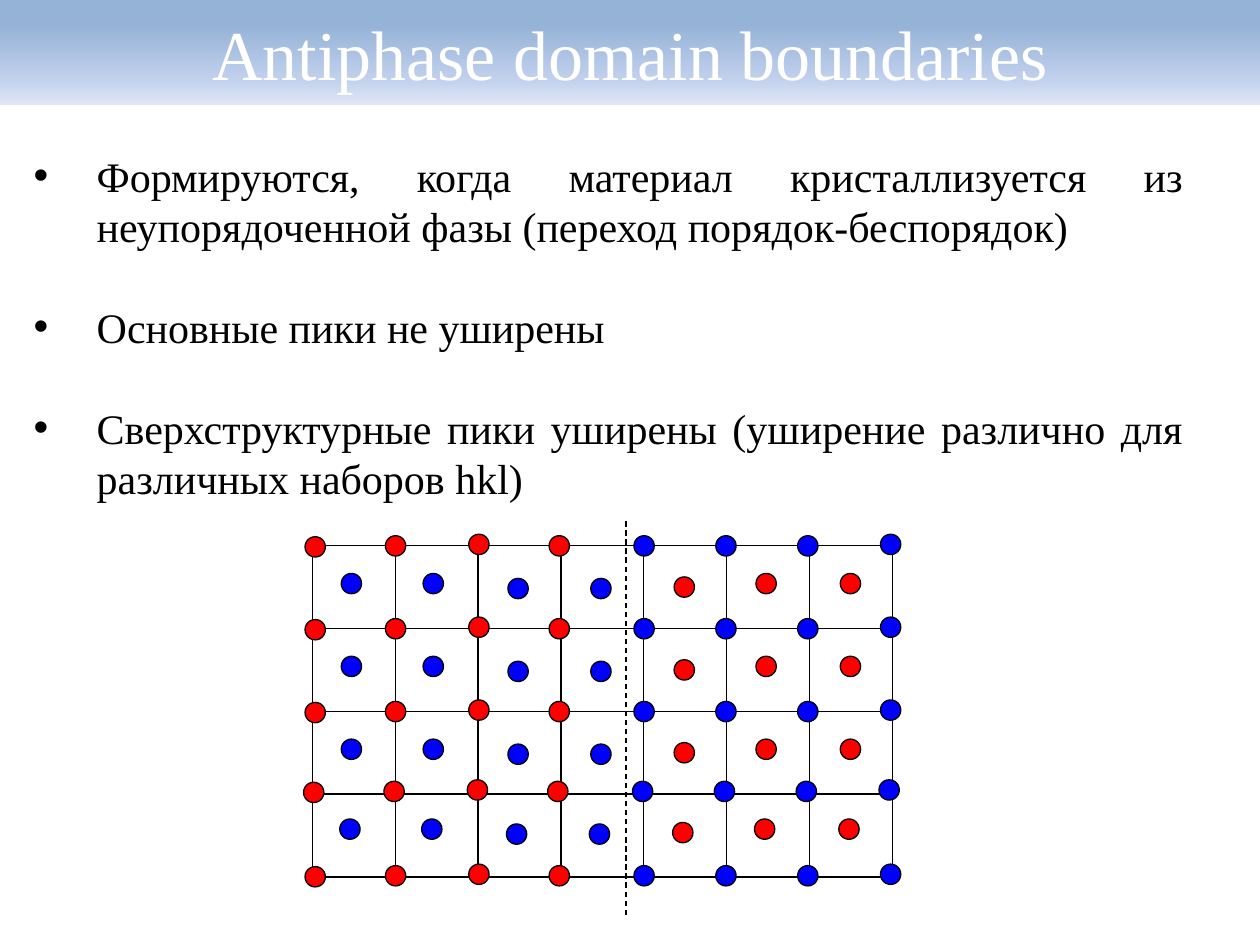
from dataclasses import dataclass
from lxml.etree import SubElement
from pptx import Presentation
from pptx.dml.color import RGBColor as Color
from pptx.enum.dml import MSO_LINE_DASH_STYLE as Dash
from pptx.enum.shapes import MSO_CONNECTOR as Connector, MSO_SHAPE as Shape
from pptx.enum.text import MSO_ANCHOR as Anchor, PP_ALIGN as Align
from pptx.oxml import parse_xml
from pptx.oxml.ns import nsdecls, qn
from pptx.util import Cm, Pt

TITLE = "Antiphase domain boundaries"
POINTS = [
    "Формируются, когда материал кристаллизуется из неупорядоченной фазы (переход порядок-беспорядок)",
    "Основные пики не уширены",
    "Сверхструктурные пики уширены (уширение различно для различных наборов hkl)",
]


@dataclass(frozen=True)
class Theme:
    font: str = "Times New Roman"
    title_size: int = 40
    body_size: int = 24
    line_pitch: float = 28.8
    line_width: float = 0.75
    white: str = "FFFFFF"
    black: str = "000000"
    red: str = "FF0000"
    blue: str = "0000FF"
    band: tuple = ((23, "95B3D7"), (77, "C2D1ED"), (100, "E1E8F5"))


THEME = Theme()
COLUMNS, ROWS = 7, 4
GRID_LEFT, GRID_TOP, CELL = 6.3, 11, 1.67
DOT = 0.41
ROW_STEPS = [(0, 0), (0, 1.67), (0, 3.34), (-0.03, 4.95), (0, 6.65)]
CORNERS = [
    (6.15, 10.82, THEME.red), (7.77, 10.8, THEME.red),
    (9.45, 10.77, THEME.red), (11.07, 10.8, THEME.red),
    (12.78, 10.8, THEME.blue), (14.43, 10.8, THEME.blue),
    (16.08, 10.8, THEME.blue), (17.75, 10.77, THEME.blue),
]
CENTRES = [
    (6.88, 11.56, THEME.blue), (8.53, 11.56, THEME.blue),
    (10.24, 11.66, THEME.blue), (11.91, 11.66, THEME.blue),
    (13.59, 11.63, THEME.red), (15.24, 11.56, THEME.red),
    (16.94, 11.56, THEME.red),
]
BOUNDARY = (12.62, 18.44, 12.62, 10.46)


def style_line(line):
    line.color.rgb = Color.from_string(THEME.black)
    line.width = Pt(THEME.line_width)


def add_outlined(shapes, kind, left, top, size, color):
    shape = shapes.add_shape(kind, Cm(left), Cm(top), Cm(size), Cm(size))
    shape.shadow.inherit = False
    shape.fill.solid()
    shape.fill.fore_color.rgb = Color.from_string(color)
    style_line(shape.line)


def style_para(para, size, color, align):
    para.font.name = THEME.font
    para.font.size = Pt(size)
    para.font.color.rgb = Color.from_string(color)
    para.alignment = align


def add_title(page, width):
    band = page.shapes.add_shape(Shape.RECTANGLE, 0, 0, width, Cm(2.12))
    band.shadow.inherit = False
    band.line.fill.background()
    band.fill.gradient()
    band.fill.gradient_angle = 270
    stops = band.fill.gradient_stops[0]._gs.getparent()
    for stop in list(stops):
        stops.remove(stop)
    for place, color in THEME.band:
        stops.append(parse_xml(
            f'<a:gs {nsdecls("a")} pos="{place * 1000}"><a:srgbClr val="{color}"/></a:gs>'))
    frame = band.text_frame
    frame.vertical_anchor = Anchor.MIDDLE
    para = frame.paragraphs[0]
    para.text = TITLE
    style_para(para, THEME.title_size, THEME.white, Align.CENTER)


def add_points(page):
    box = page.shapes.add_textbox(Cm(0.43), Cm(2.9), Cm(23.67), Cm(7.44))
    frame = box.text_frame
    frame.word_wrap = True
    for index, text in enumerate(POINTS):
        para = frame.add_paragraph() if index else frame.paragraphs[0]
        para.text = text
        style_para(para, THEME.body_size, THEME.black, Align.JUSTIFY)
        para.line_spacing = Pt(THEME.line_pitch)
        para.space_before = Pt(THEME.line_pitch if index else 0)
        props = para._p.get_or_add_pPr()
        props.set("marL", str(Cm(1.27)))
        props.set("indent", str(-Cm(1.27)))
        bullet_font = parse_xml(f'<a:buFont {nsdecls("a")} typeface="Arial"/>')
        bullet = parse_xml(f'<a:buChar {nsdecls("a")} char="•"/>')
        props.find(qn("a:defRPr")).addprevious(bullet_font)
        bullet_font.addnext(bullet)


def add_lattice(page):
    shapes = page.shapes.add_group_shape().shapes
    for row in range(ROWS):
        for column in range(COLUMNS):
            add_outlined(shapes, Shape.RECTANGLE, GRID_LEFT + column * CELL,
                         GRID_TOP + row * CELL, CELL, THEME.white)
    for atoms, steps in ((CORNERS, ROW_STEPS), (CENTRES, ROW_STEPS[:ROWS])):
        for left, top, color in atoms:
            for shift, drop in steps:
                add_outlined(shapes, Shape.OVAL, left + shift, top + drop, DOT, color)
    boundary = shapes.add_connector(Connector.STRAIGHT, *map(Cm, BOUNDARY))
    style_line(boundary.line)
    boundary.line.dash_style = Dash.DASH
    SubElement(boundary._element.spPr, qn("a:effectLst"))


def main():
    deck = Presentation()
    deck.slide_width, deck.slide_height = Cm(25.4), Cm(19.05)
    page = deck.slides.add_slide(deck.slide_layouts[6])
    add_title(page, deck.slide_width)
    add_lattice(page)
    add_points(page)
    deck.save("out.pptx")


if __name__ == "__main__":
    main()
